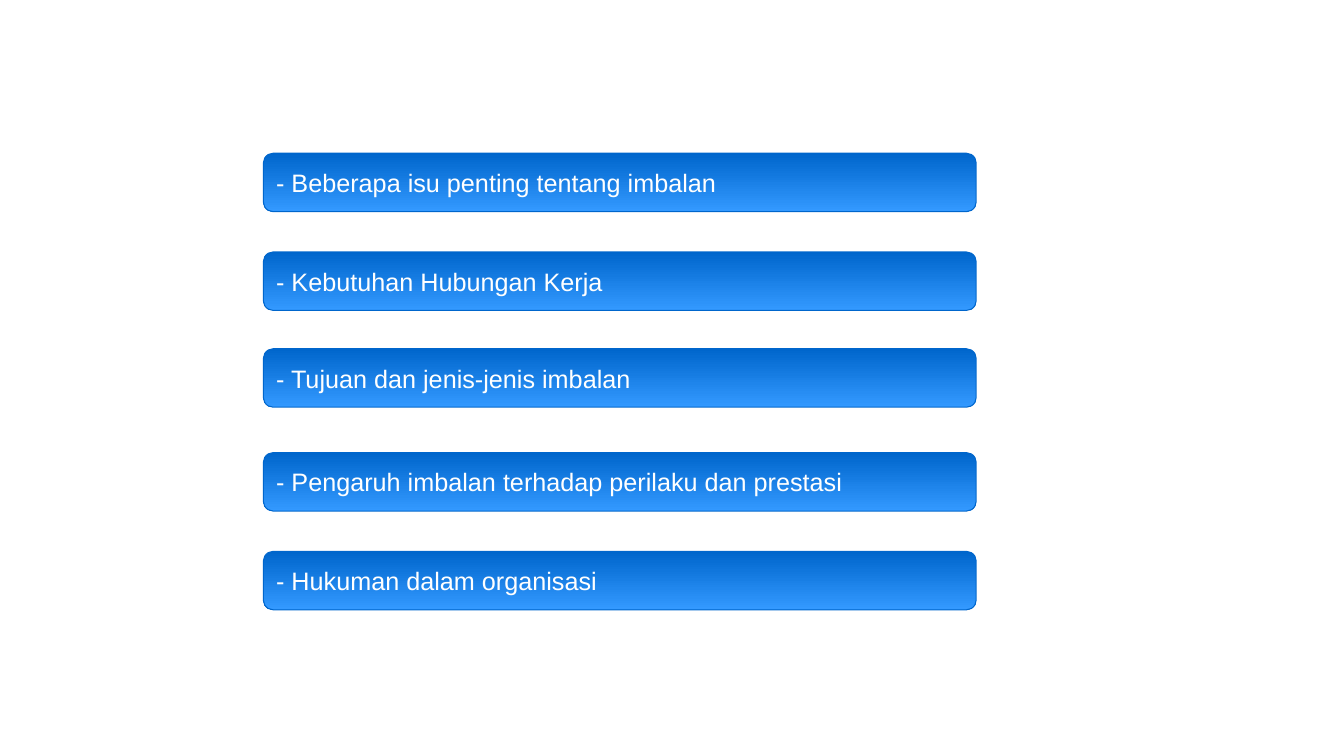
from dataclasses import dataclass

import pptx
import pptx.dml.color
import pptx.enum.shapes
import pptx.enum.text
import pptx.presentation
import pptx.shapes.autoshape
import pptx.slide
import pptx.util

SLIDE_WIDTH = pptx.util.Inches(13.33)
SLIDE_HEIGHT = pptx.util.Inches(7.5)
DEEP_BLUE = "0066CC"
BRIGHT_BLUE = "3399FF"
WHITE = "FFFFFF"

# Shares of the slide's width and height, in percent
BAR_LEFT = 19.6
BAR_WIDTH = 53.04
BAR_HEIGHT = 7.73


@dataclass(frozen=True)
class Topic:
    """One agenda bar; top is a percentage of the slide's height."""
    text: str
    top: float


TOPICS = [
    Topic("- Beberapa isu penting tentang imbalan", 20.27),
    Topic("- Kebutuhan Hubungan Kerja", 33.33),
    Topic("- Tujuan dan jenis-jenis imbalan", 46.13),
    Topic("- Pengaruh imbalan terhadap perilaku dan prestasi", 59.87),
    Topic("- Hukuman dalam organisasi", 72.93),
]


def across(percent: float) -> int:
    return round(SLIDE_WIDTH * percent / 100)


def down(percent: float) -> int:
    return round(SLIDE_HEIGHT * percent / 100)


def colour(hex_code: str) -> pptx.dml.color.RGBColor:
    return pptx.dml.color.RGBColor.from_string(hex_code)


def write(bar: pptx.shapes.autoshape.Shape, text: str, *, size: float = 18,
          font: str = "Arial", ink: str = WHITE) -> None:
    frame = bar.text_frame
    frame.word_wrap = True
    frame.vertical_anchor = pptx.enum.text.MSO_ANCHOR.MIDDLE
    paragraph = frame.paragraphs[0]
    paragraph.alignment = pptx.enum.text.PP_ALIGN.LEFT
    run = paragraph.add_run()
    run.text = text
    run.font.name = font
    run.font.size = pptx.util.Pt(size)
    run.font.color.rgb = colour(ink)


def draw_topic(slide: pptx.slide.Slide, topic: Topic) -> None:
    bar = slide.shapes.add_shape(
        pptx.enum.shapes.MSO_SHAPE.ROUNDED_RECTANGLE,
        across(BAR_LEFT), down(topic.top), across(BAR_WIDTH), down(BAR_HEIGHT))
    bar.shadow.inherit = False
    bar.fill.gradient()
    bar.fill.gradient_angle = 270  # counter-clockwise: top to bottom
    for stop, shade, position in zip(bar.fill.gradient_stops,
                                     (DEEP_BLUE, BRIGHT_BLUE), (0, 1)):
        stop.color.rgb = colour(shade)
        stop.position = position
    bar.line.color.rgb = colour(DEEP_BLUE)
    bar.line.width = pptx.util.Pt(0.75)
    write(bar, topic.text)


def main() -> None:
    deck = pptx.Presentation()
    deck.slide_width = SLIDE_WIDTH
    deck.slide_height = SLIDE_HEIGHT
    slide = deck.slides.add_slide(deck.slide_layouts[6])
    for topic in TOPICS:
        draw_topic(slide, topic)
    deck.save("out.pptx")


if __name__ == "__main__":
    main()
